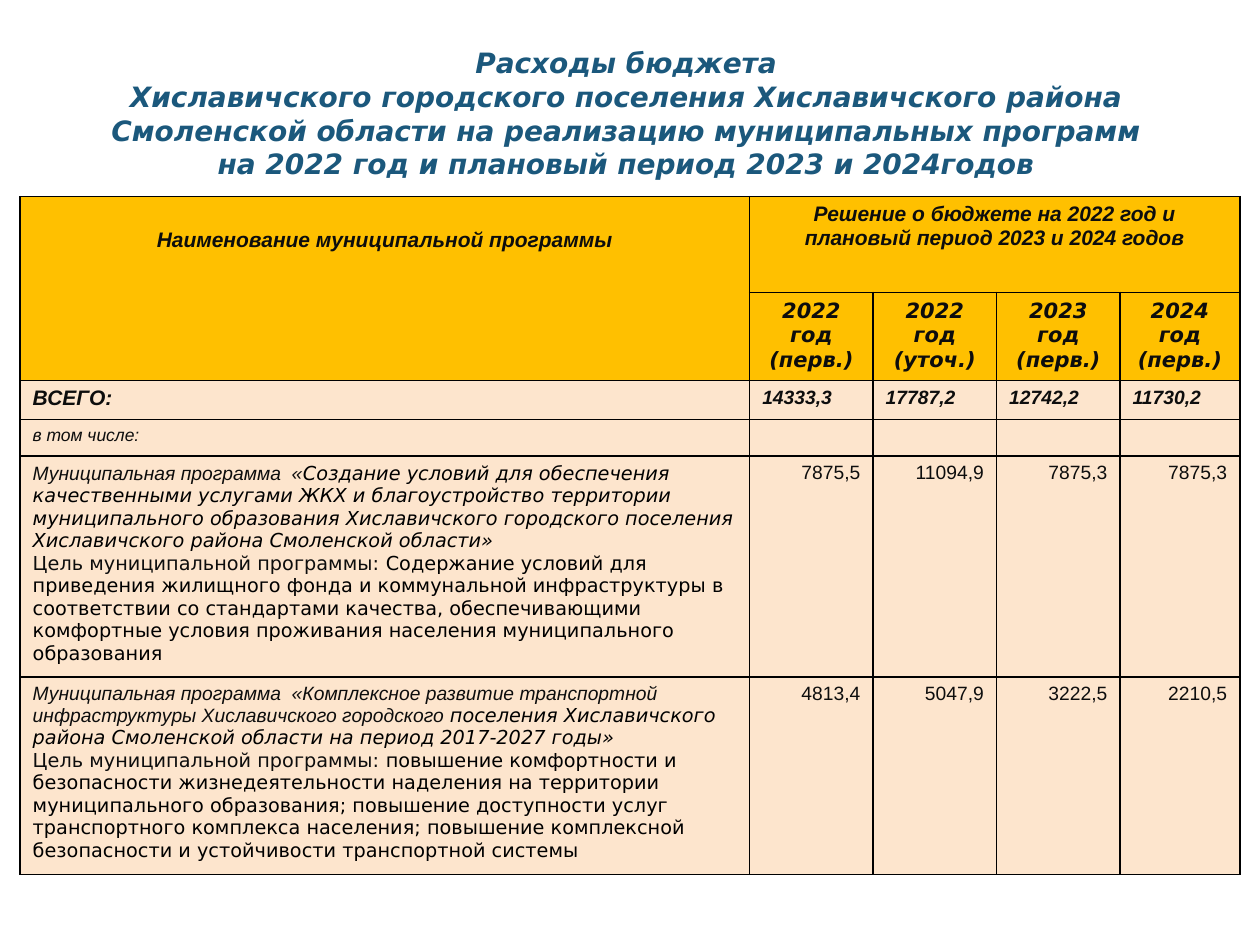
from lxml.etree import SubElement
from pptx import Presentation
from pptx.dml.color import RGBColor
from pptx.enum.text import MSO_ANCHOR, PP_ALIGN
from pptx.oxml.ns import qn
from pptx.util import Inches, Pt

COLORS = {"title": "1B587C", "text": "0D0D0D", "black": "000000",
          "head": "FFC000", "body": "FDE5CD"}
SANS = "DejaVu Sans"
CENTER, RIGHT = PP_ALIGN.CENTER, PP_ALIGN.RIGHT
COLS = [5.79, 0.98, 0.98, 0.98, 0.95]
ROWS = [0.76, 0.49, 0.31, 0.29, 1.53, 1.53]

TITLE = ["Расходы бюджета",
         "Хиславичского городского поселения Хиславичского района "
         "Смоленской области на реализацию муниципальных программ",
         "на 2022 год и плановый период 2023 и 2024годов"]
YEARS = [["2022 год (перв.)"], ["2022 год (уточ.)"],
         ["2023 год", "(перв.)"], ["2024 год (перв.)"]]
TOTALS = ["14333,3", "17787,2", "12742,2", "11730,2"]
GOAL = "Цель муниципальной программы: "
# Each program: Arial part of the name, rest of the name, goal, amounts
PROGRAMS = [
    ("Муниципальная программа  «",
     "Создание условий для обеспечения качественными услугами ЖКХ и "
     "благоустройство территории муниципального образования Хиславичского "
     "городского поселения Хиславичского района Смоленской области»",
     "Содержание условий для приведения жилищного фонда и коммунальной "
     "инфраструктуры в соответствии со стандартами качества, "
     "обеспечивающими комфортные условия проживания населения "
     "муниципального образования",
     ["7875,5", "11094,9", "7875,3", "7875,3"]),
    ("Муниципальная программа  «Комплексное развитие транспортной "
     "инфраструктуры Хиславичского городского ",
     "поселения Хиславичского района Смоленской области на период "
     "2017-2027 годы»",
     "повышение комфортности и безопасности жизнедеятельности наделения на "
     "территории муниципального образования; повышение доступности услуг "
     "транспортного комплекса населения; повышение комплексной "
     "безопасности и устойчивости транспортной системы",
     ["4813,4", "5047,9", "3222,5", "2210,5"]),
]


def put(para, text, size=12, font="Arial", color="text",
        bold=False, italic=False, align=None):
    """Add a formatted run to a paragraph."""
    if align is not None:
        para.alignment = align
    run = para.add_run()
    run.text = text
    run.font.size = Pt(size)
    run.font.name = font
    run.font.bold = bold
    run.font.italic = italic
    run.font.color.rgb = RGBColor.from_string(COLORS[color])


def add_title(slide):
    box = slide.shapes.add_textbox(Inches(0.47), Inches(0.23),
                                   Inches(9), Inches(1.25))
    frame = box.text_frame
    frame.word_wrap = True
    frame.vertical_anchor = MSO_ANCHOR.BOTTOM
    para = frame.paragraphs[0]
    for i, line in enumerate(TITLE):
        if i:
            para.add_line_break()
        put(para, line, size=16, font=SANS, color="title",
            bold=True, italic=True, align=CENTER)


def add_edges(cell):
    props = cell._tc.get_or_add_tcPr()
    for side in "LRTB":
        line = SubElement(props, qn(f"a:ln{side}"), w=str(Pt(1)))
        fill = SubElement(line, qn("a:solidFill"))
        SubElement(fill, qn("a:srgbClr"), val=COLORS["black"])


def add_grid(slide):
    """Add the empty table with its fills and borders."""
    table = slide.shapes.add_table(
        len(ROWS), len(COLS), Inches(0.16), Inches(1.56),
        Inches(sum(COLS)), Inches(sum(ROWS))).table
    for col, width in zip(table.columns, COLS):
        col.width = Inches(width)
    for i, (row, height) in enumerate(zip(table.rows, ROWS)):
        row.height = Inches(height)
        for cell in row.cells:
            add_edges(cell)
            cell.fill.solid()
            shade = COLORS["head" if i < 2 else "body"]
            cell.fill.fore_color.rgb = RGBColor.from_string(shade)
    table.cell(0, 0).merge(table.cell(1, 0))
    table.cell(0, 1).merge(table.cell(0, 4))
    return table


def write(cell, lines, **style):
    frame = cell.text_frame
    for i, line in enumerate(lines):
        para = frame.add_paragraph() if i else frame.paragraphs[0]
        put(para, line, **style)


def fill_head(table):
    style = dict(bold=True, italic=True, align=CENTER)
    name = table.cell(0, 0)
    name.margin_top = Inches(0.25)
    write(name, ["Наименование муниципальной программы"], **style)
    write(table.cell(0, 1), ["Решение о бюджете на 2022 год и "
                             "плановый период 2023 и 2024 годов"], **style)
    for col, lines in enumerate(YEARS, 1):
        write(table.cell(1, col), lines, font=SANS, **style)


def fill_totals(table):
    write(table.cell(2, 0), ["ВСЕГО:"], bold=True, italic=True)
    write(table.cell(3, 0), ["в том числе:"], size=10, italic=True)
    for col, total in enumerate(TOTALS, 1):
        write(table.cell(2, col), [total], size=11, bold=True, italic=True)
        para = table.cell(3, col).text_frame.paragraphs[0]
        SubElement(para._p, qn("a:endParaRPr"), sz="1000")


def fill_program(table, row, start, rest, goal, sums):
    frame = table.cell(row, 0).text_frame
    name, aim = frame.paragraphs[0], frame.add_paragraph()
    put(name, start, size=11, italic=True)
    put(name, rest, size=11, font=SANS, color="black", italic=True)
    put(aim, GOAL, size=11, font=SANS)
    put(aim, goal, size=11, font=SANS, color="black")
    for col, value in enumerate(sums, 1):
        write(table.cell(row, col), [value], size=11, align=RIGHT)


def main():
    deck = Presentation()
    deck.slide_width, deck.slide_height = Inches(10), Inches(7.5)
    slide = deck.slides.add_slide(deck.slide_layouts[6])
    add_title(slide)
    table = add_grid(slide)
    fill_head(table)
    fill_totals(table)
    for row, program in enumerate(PROGRAMS, 4):
        fill_program(table, row, *program)
    deck.save("out.pptx")


if __name__ == "__main__":
    main()
